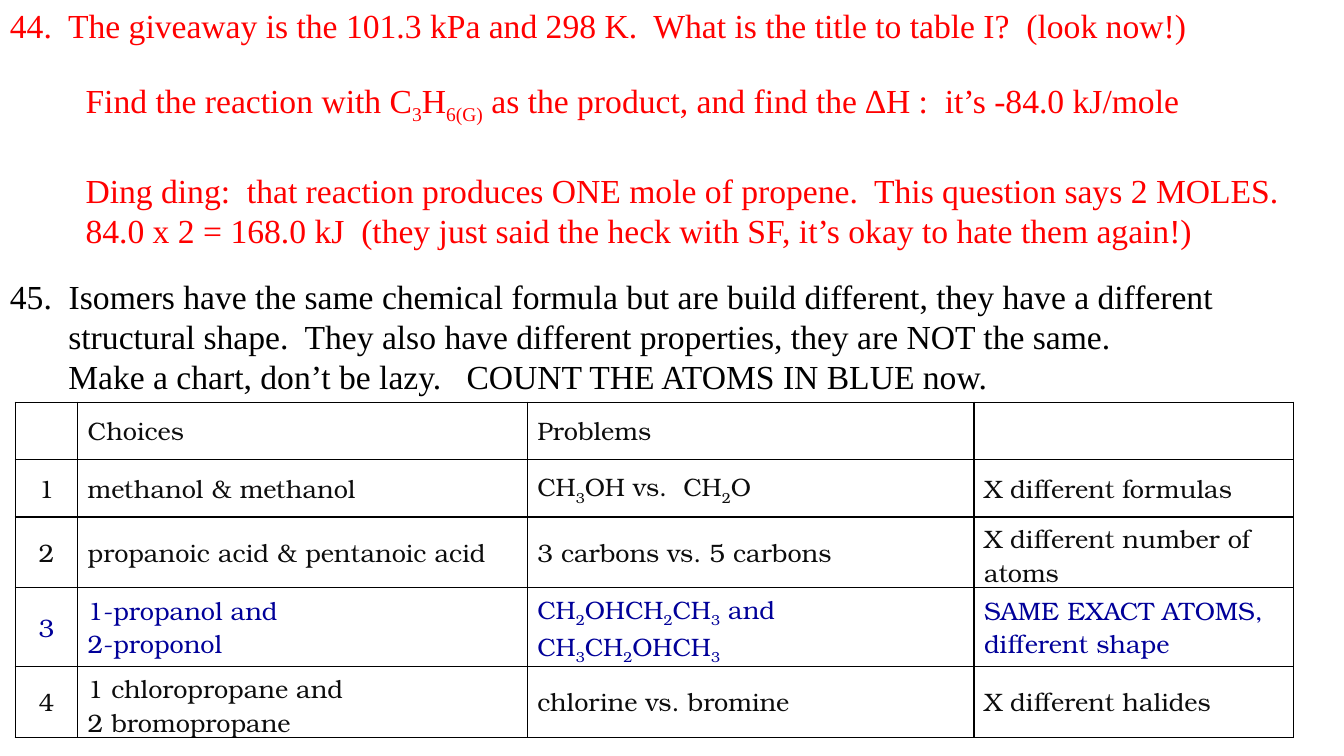
"""Build the slide with answers 44 and 45 and the isomer table."""
from lxml.etree import SubElement
from pptx import Presentation
from pptx.dml.color import RGBColor
from pptx.enum.text import MSO_ANCHOR, PP_ALIGN
from pptx.oxml.ns import qn
from pptx.util import Inches, Pt

RED = RGBColor(0xFF, 0, 0)
BLACK = RGBColor(0, 0, 0)
INK = RGBColor(0x0D, 0x0D, 0x0D)
BLUE = RGBColor(0, 0, 0x99)
SERIF, BOOK = "Times New Roman", "TeX Gyre Bonum"

# Subscripts stand between tildes; each answer is (text, colour, left, first-line indent, space before).
ANSWERS = [
    ("44.  The giveaway is the 101.3 kPa and 298 K.  What is the title to table I?  (look now!)",
     RED, 0.58, -0.58, 0),
    ("Find the reaction with C~3~H~6(G)~ as the product, and find the ∆H :  it’s -84.0 kJ/mole",
     RED, 0.75, 0, 29),
    ("Ding ding:  that reaction produces ONE mole of propene.  This question says 2 MOLES.\v"
     "84.0 x 2 = 168.0 kJ  (they just said the heck with SF, it’s okay to hate them again!)",
     RED, 0.75, 0, 32),
    ("45.  Isomers have the same chemical formula but are build different, they have a different\v"
     "structural shape.  They also have different properties, they are NOT the same.\v"
     "Make a chart, don’t be lazy.   COUNT THE ATOMS IN BLUE now.",
     BLACK, 0.58, -0.58, 18.5),
]
ROWS = [
    ("", "Choices", "Problems", ""),
    ("1", "methanol & methanol", "CH~3~OH vs.  CH~2~O", "X different formulas"),
    ("2", "propanoic acid & pentanoic acid", "3 carbons vs. 5 carbons", "X different number of atoms"),
    ("3", "1-propanol and\v2-proponol", "CH~2~OHCH~2~CH~3~ and CH~3~CH~2~OHCH~3~",
     "SAME EXACT ATOMS, different shape"),
    ("4", "1 chloropropane and\v2 bromopropane", "chlorine vs. bromine", "X different halides"),
]
COLUMNS = (0.62, 4.46, 4.43, 3.17)
ROW_HEIGHT = 0.57
ISOMER_ROW = 3
TABLE_LEFT, TABLE_TOP = 0.15, 3.99


def write(p, text, font, size, color):
    """Fill a paragraph, lowering the parts between tildes."""
    p.font.name, p.font.size, p.font.color.rgb = font, Pt(size), color
    for i, part in enumerate(text.split("~")):
        for j, line in enumerate(part.split("\v")):
            if j:
                p.add_line_break()
            if line:
                r = p.add_run()
                r.text = line
                r.font.name, r.font.size, r.font.color.rgb = font, Pt(size), color
                if i % 2:
                    r.font._element.set("baseline", "-25000")


def add_borders(cell):
    """Draw a one-point black line on each side of a cell."""
    tc_pr = cell._tc.get_or_add_tcPr()
    for i, side in enumerate(("lnL", "lnR", "lnT", "lnB")):
        ln = tc_pr.makeelement(qn(f"a:{side}"), {"w": str(Pt(1))})
        SubElement(SubElement(ln, qn("a:solidFill")), qn("a:srgbClr"), val=str(BLACK))
        tc_pr.insert(i, ln)


def add_answers(s):
    """Add the numbered answers above the table."""
    tf = s.shapes.add_textbox(0, 0, Inches(13.33), Inches(TABLE_TOP)).text_frame
    tf.word_wrap = True
    for i, (text, color, left, indent, before) in enumerate(ANSWERS):
        p = tf.add_paragraph() if i else tf.paragraphs[0]
        write(p, text, SERIF, 24, color)
        p.line_spacing, p.space_before = Pt(28.6), Pt(before)
        p_pr = p._p.get_or_add_pPr()
        p_pr.set("marL", str(Inches(left)))
        p_pr.set("indent", str(Inches(indent)))


def add_isomer_table(s):
    """Add the table that compares the four choices."""
    table = s.shapes.add_table(
        len(ROWS), len(COLUMNS), Inches(TABLE_LEFT), Inches(TABLE_TOP),
        Inches(sum(COLUMNS)), Inches(ROW_HEIGHT * len(ROWS))).table
    table.first_row = table.horz_banding = False
    for column, width in zip(table.columns, COLUMNS):
        column.width = Inches(width)
    for i, row in enumerate(ROWS):
        table.rows[i].height = Inches(ROW_HEIGHT)
        for j, text in enumerate(row):
            cell = table.cell(i, j)
            cell.fill.background()
            cell.vertical_anchor = MSO_ANCHOR.MIDDLE
            p = cell.text_frame.paragraphs[0]
            p.alignment = PP_ALIGN.LEFT if j else PP_ALIGN.CENTER
            write(p, text, BOOK, 18, BLUE if i == ISOMER_ROW else INK)
            add_borders(cell)


def main():
    """Create and save the slide."""
    prs = Presentation()
    prs.slide_width, prs.slide_height = Inches(13.33), Inches(7.5)
    s = prs.slides.add_slide(prs.slide_layouts[6])
    add_answers(s)
    add_isomer_table(s)
    prs.save("out.pptx")


if __name__ == "__main__":
    main()
